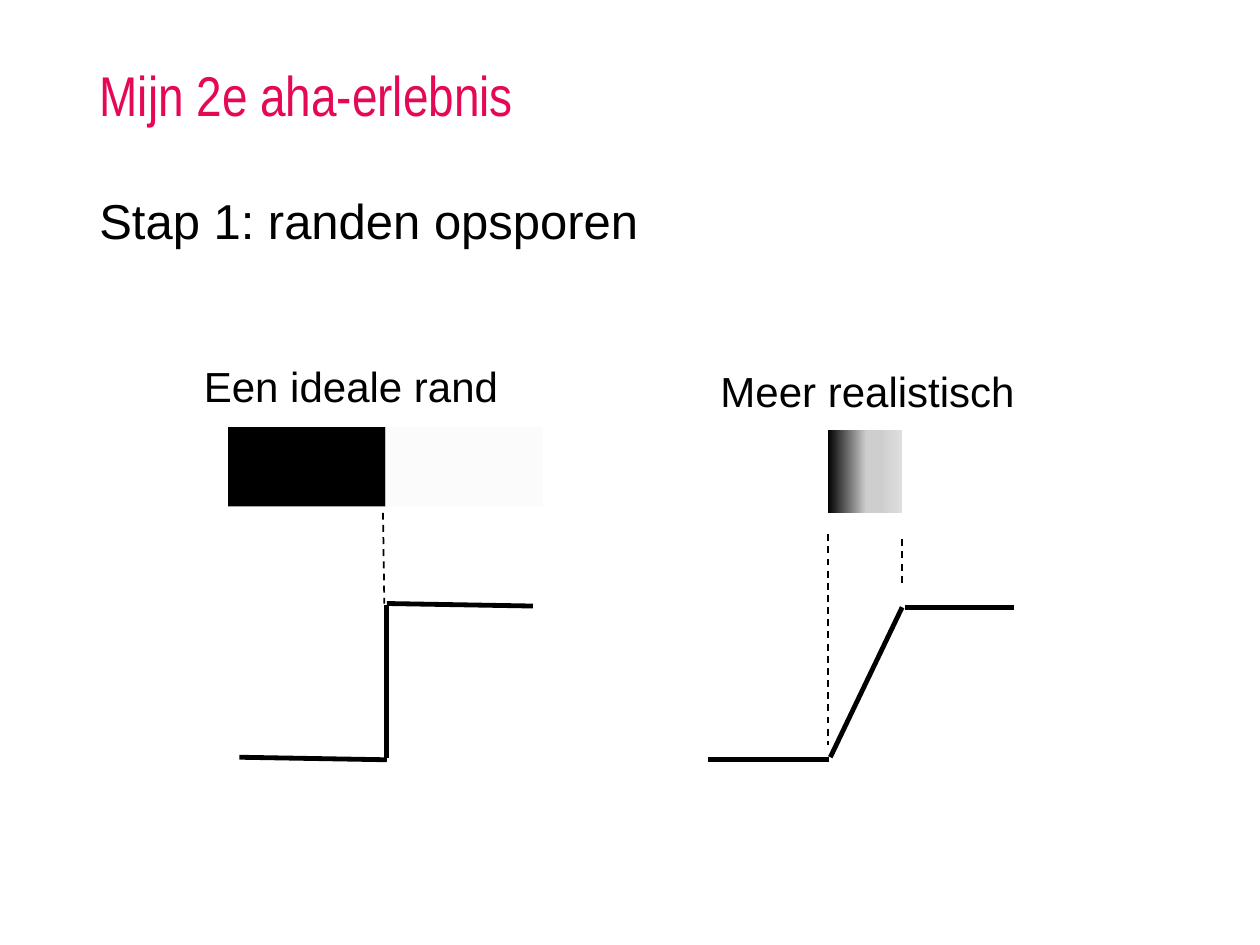
import lxml.etree
import pptx
import pptx.dml.color
import pptx.enum.dml
import pptx.enum.shapes
import pptx.enum.text
import pptx.oxml.ns
import pptx.util

Inches = pptx.util.Inches
RGBColor = pptx.dml.color.RGBColor

PINK = RGBColor(0xE5, 0x08, 0x56)
BLACK = RGBColor(0x00, 0x00, 0x00)
OFF_WHITE = RGBColor(0xFB, 0xFB, 0xFB)
GREY = RGBColor(0xCE, 0xCE, 0xCE)
LIGHT_GREY = RGBColor(0xDE, 0xDE, 0xDE)

EDGE_STOPS = [(0, BLACK), (52, GREY), (70, GREY), (100, LIGHT_GREY)]

BANDS = [
    ((1.81, 3.39, 1.25, 0.63), BLACK),
    ((3.06, 3.39, 1.25, 0.63), OFF_WHITE),
]
BLURRED_BAND = (6.57, 3.41, 0.59, 0.66)

PROFILE_LINES = [
    (1.9, 6.01, 3.07, 6.03),
    (3.07, 6.02, 3.07, 4.8),
    (3.07, 4.79, 4.23, 4.81),
    (5.62, 6.03, 6.58, 6.03),
    (6.59, 6.01, 7.16, 4.82),
    (7.18, 4.82, 8.05, 4.82),
]
GUIDE_LINES = [
    (3.04, 4.07, 3.05, 4.79),
    (6.57, 4.24, 6.57, 5.91),
    (7.16, 4.28, 7.16, 4.64),
]
LABELS = [
    ("Een ideale rand", (1.52, 2.81, 3.04, 0.5)),
    ("Meer realistisch", (5.62, 2.85, 3.04, 0.5)),
]


def apply_format(target, values):
    """Set each attribute of the target from a dict of values."""
    for name, value in values.items():
        setattr(target, name, value)


def write_text(box, text, size, font="Arial", color=BLACK, spacing=1.0,
               anchor=pptx.enum.text.MSO_ANCHOR.TOP,
               auto_size=pptx.enum.text.MSO_AUTO_SIZE.NONE):
    """Fill a box with one formatted, left-aligned paragraph."""
    frame = box.text_frame
    apply_format(frame, {"word_wrap": True, "auto_size": auto_size,
                         "vertical_anchor": anchor})
    para = frame.paragraphs[0]
    apply_format(para, {"alignment": pptx.enum.text.PP_ALIGN.LEFT,
                        "line_spacing": spacing, "space_before": pptx.util.Pt(0)})
    span = para.add_run()
    apply_format(span, {"text": text})
    apply_format(span.font, {"name": font, "size": pptx.util.Pt(size), "bold": False})
    span.font.color.rgb = color


def add_title(page, text):
    """Move and format the title placeholder."""
    box = page.shapes.title
    apply_format(box, {"left": Inches(0.69), "top": Inches(0.4),
                       "width": Inches(8.62), "height": Inches(0.67)})
    write_text(box, text, 32, "Arial Narrow", PINK, 0.9,
               pptx.enum.text.MSO_ANCHOR.BOTTOM)


def add_text(page, text, place, size, **options):
    """Add a text box at the given place."""
    box = page.shapes.add_textbox(*map(Inches, place))
    write_text(box, text, size, **options)


def add_band(page, place):
    """Add a rectangle without outline or shadow."""
    band = page.shapes.add_shape(
        pptx.enum.shapes.MSO_SHAPE.RECTANGLE, *map(Inches, place))
    band.shadow.inherit = False
    band.line.fill.background()
    return band


def fill_gradient(band, stops):
    """Fill a rectangle with colour stops running left to right."""
    band.fill.gradient()
    band.fill.gradient_angle = 0
    qn = pptx.oxml.ns.qn
    stop_list = band.fill._xPr.find(qn("a:gradFill")).find(qn("a:gsLst"))
    for old_stop in list(stop_list):
        stop_list.remove(old_stop)
    for percent, color in stops:
        stop = lxml.etree.SubElement(stop_list, qn("a:gs"), pos=str(percent * 1000))
        lxml.etree.SubElement(stop, qn("a:srgbClr"), val=str(color))


def add_line(page, ends, width, dash=None):
    """Add a black straight line without shadow."""
    line = page.shapes.add_connector(
        pptx.enum.shapes.MSO_CONNECTOR.STRAIGHT, *map(Inches, ends))
    line.line.color.rgb = BLACK
    apply_format(line.line, {"width": pptx.util.Pt(width), "dash_style": dash})
    lxml.etree.SubElement(line._element.spPr, pptx.oxml.ns.qn("a:effectLst"))


def main():
    """Build the slide on edge detection and save it."""
    deck = pptx.Presentation()
    apply_format(deck, {"slide_width": Inches(10), "slide_height": Inches(7.5)})
    page = deck.slides.add_slide(deck.slide_layouts[5])
    add_title(page, "Mijn 2e aha-erlebnis")
    add_text(page, "Stap 1: randen opsporen", (0.69, 1.55, 8.62, 0.94), 28, spacing=0.8)
    for place, color in BANDS:
        band = add_band(page, place)
        band.fill.solid()
        band.fill.fore_color.rgb = color
    fill_gradient(add_band(page, BLURRED_BAND), EDGE_STOPS)
    for ends in PROFILE_LINES:
        add_line(page, ends, 2.75)
    for ends in GUIDE_LINES:
        add_line(page, ends, 1, pptx.enum.dml.MSO_LINE.DASH)
    for text, place in LABELS:
        add_text(page, text, place, 24,
                 auto_size=pptx.enum.text.MSO_AUTO_SIZE.SHAPE_TO_FIT_TEXT)
    deck.save("out.pptx")


if __name__ == "__main__":
    main()
